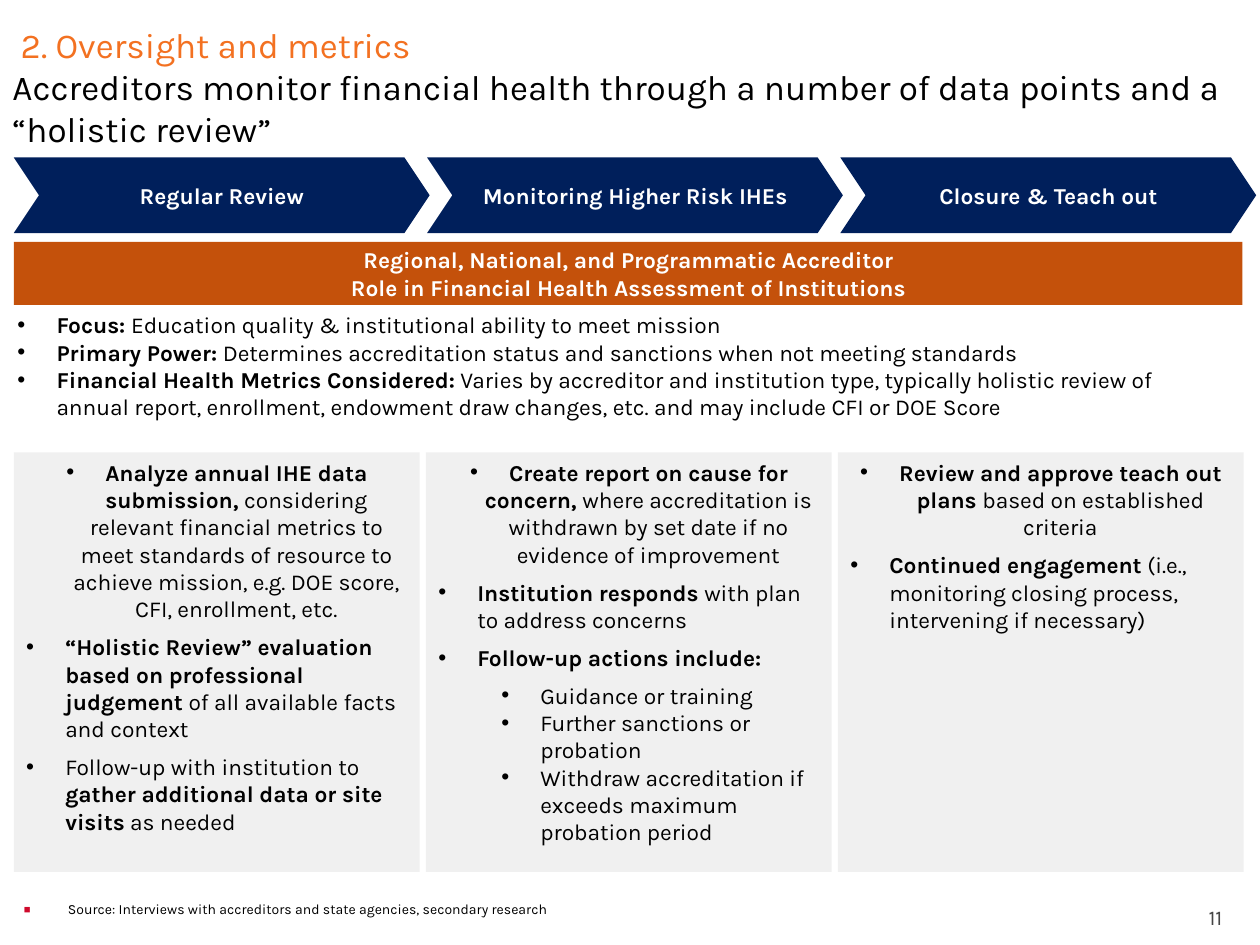
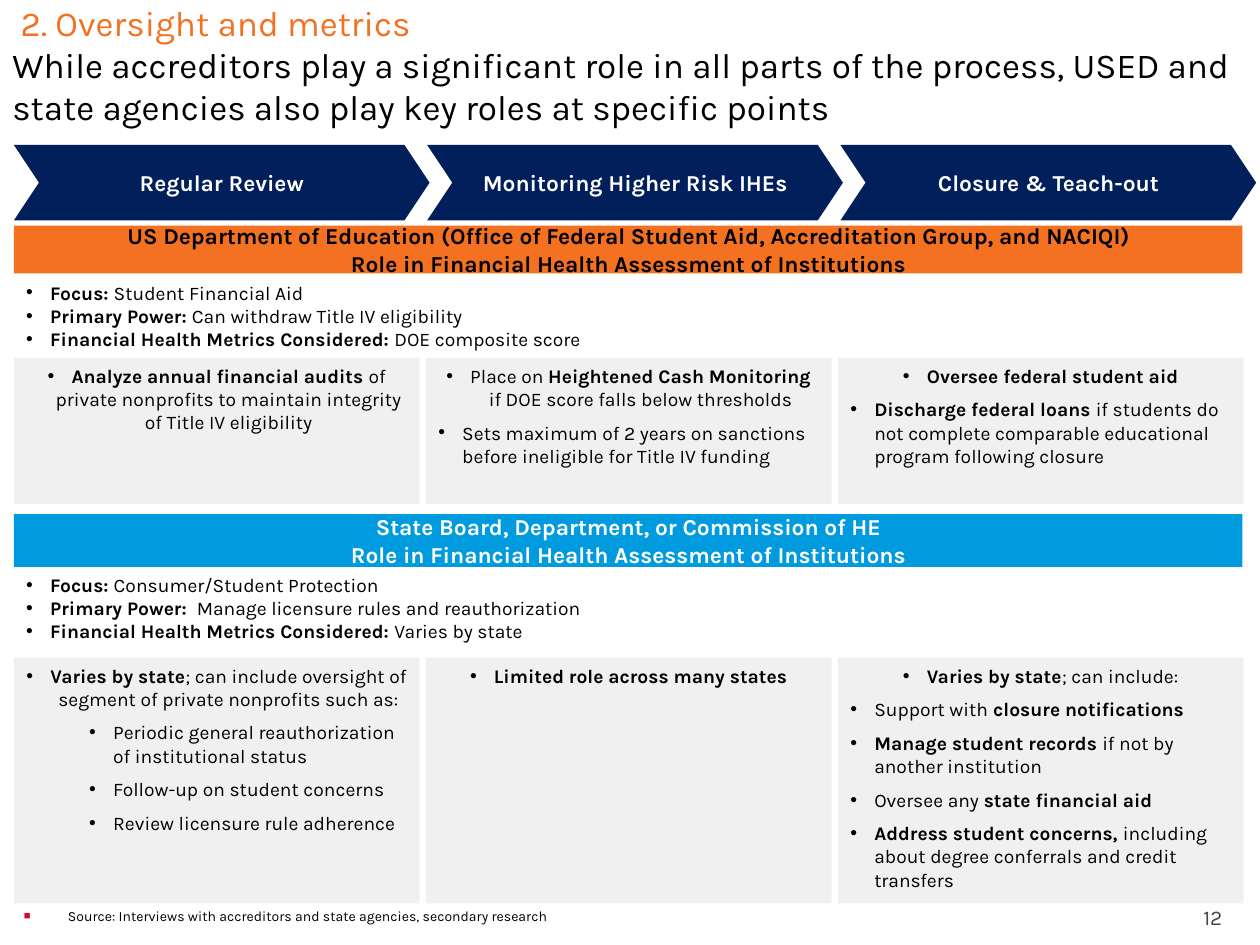
import pptx
import pptx.util
import pptx.dml.color
import pptx.enum.shapes
import pptx.enum.text
from lxml import etree
from pptx.oxml.ns import qn

Inches, Pt = pptx.util.Inches, pptx.util.Pt
RGB = pptx.dml.color.RGBColor
SHAPE = pptx.enum.shapes.MSO_SHAPE
ALIGN = pptx.enum.text.PP_ALIGN
ANCHOR = pptx.enum.text.MSO_ANCHOR

# Colours and font
NAVY, RUST = RGB(0x00, 0x1F, 0x5B), RGB(0xC4, 0x51, 0x0B)
ORANGE, BLUE = RGB(0xF3, 0x71, 0x21), RGB(0x00, 0x9B, 0xDE)
GREY, DARK = RGB(0xF0, 0xF0, 0xF0), RGB(0x45, 0x45, 0x45)
BLACK, WHITE = RGB(0, 0, 0), RGB(0xFF, 0xFF, 0xFF)
RED = RGB(0xCF, 0x0A, 0x2C)
FONT = "Karla"

# Content: **bold** marks strong words, a leading ">" marks a sub-bullet
SECTION = " 2. Oversight and metrics"
ROLE = "Role in Financial Health Assessment of Institutions"
SOURCE = "Source: Interviews with accreditors and state agencies, secondary research"

SLIDES = [
    dict(
        number=11,
        title="Accreditors monitor financial health through a number of data "
              "points and a “holistic review”",
        title_top=0, title_width=9.89, stage_top=1.25, source_top=7.05,
        stages=["Regular Review", "Monitoring Higher Risk IHEs",
                "Closure & Teach out"],
        size=13, indent=0.31, sub_after=0,
        agencies=[dict(
            name="Regional, National, and Programmatic Accreditor",
            fill=RUST, color=WHITE, band=(1.92, 0.5),
            facts_at=(0.04, 2.42, 9.81, 0.98), panel=(3.59, 3.33),
            facts=[
                "**Focus: **Education quality & institutional ability to meet mission",
                "**Primary Power: **Determines accreditation status and "
                "sanctions when not meeting standards",
                "**Financial Health Metrics Considered: **Varies by accreditor "
                "and institution type, typically holistic review of annual "
                "report, enrollment, endowment draw changes, etc. and may "
                "include CFI or DOE Score",
            ],
            columns=[
                ["**Analyze annual IHE data submission, **considering relevant "
                 "financial metrics to meet standards of resource to achieve "
                 "mission, e.g. DOE score, CFI, enrollment, etc.",
                 "**“Holistic Review” evaluation based on professional "
                 "judgement **of all available facts and context",
                 "Follow-up with institution to **gather additional data or "
                 "site visits** as needed"],
                ["**Create report on cause for concern, **where accreditation "
                 "is withdrawn by set date if no evidence of improvement",
                 "**Institution responds **with plan to address concerns",
                 "**Follow-up actions include:**",
                 ">Guidance or training",
                 ">Further sanctions or probation",
                 ">Withdraw accreditation if exceeds maximum probation period"],
                ["**Review and approve teach out plans **based on established "
                 "criteria",
                 "**Continued engagement **(i.e., monitoring closing process, "
                 "intervening if necessary)"],
            ])],
    ),
    dict(
        number=12,
        title="While accreditors play a significant role in all parts of the "
              "process, USED and state agencies also play key roles at "
              "specific points",
        title_top=-0.17, title_width=9.97, stage_top=1.15, source_top=7.1,
        stages=["Regular Review", "Monitoring Higher Risk IHEs",
                "Closure & Teach-out"],
        size=11, indent=0.19, sub_after=6,
        agencies=[
            dict(
                name="US Department of Education (Office of Federal Student "
                     "Aid, Accreditation Group, and NACIQI)",
                fill=ORANGE, color=BLACK, band=(1.79, 0.38),
                facts_at=(0.11, 2.18, 9.81, 0.66), panel=(2.84, 1.16),
                facts=[
                    "**Focus: **Student Financial Aid",
                    "**Primary Power: **Can withdraw Title IV eligibility",
                    "**Financial Health Metrics Considered: **DOE composite score",
                ],
                columns=[
                    ["**Analyze annual financial audits **of private nonprofits "
                     "to maintain integrity of Title IV eligibility"],
                    ["Place on **Heightened Cash Monitoring **if DOE score "
                     "falls below thresholds",
                     "Sets maximum of 2 years on sanctions before ineligible "
                     "for Title IV funding"],
                    ["**Oversee federal student aid**",
                     "**Discharge federal loans **if students do not complete "
                     "comparable educational program following closure"],
                ]),
            dict(
                name="State Board, Department, or Commission of HE",
                fill=BLUE, color=WHITE, band=(4.08, 0.42),
                facts_at=(0.11, 4.5, 9.81, 0.66), panel=(5.22, 1.95),
                facts=[
                    "**Focus: **Consumer/Student Protection",
                    "**Primary Power:  **Manage licensure rules and reauthorization",
                    "**Financial Health Metrics Considered: **Varies by state",
                ],
                columns=[
                    ["**Varies by state**; can include oversight of segment of "
                     "private nonprofits such as:",
                     ">Periodic general reauthorization of institutional status",
                     ">Follow-up on student concerns",
                     ">Review licensure rule adherence"],
                    ["**Limited role across many states**"],
                    ["**Varies by state**; can include:",
                     "Support with** closure notifications**",
                     "**Manage student records **if not by another institution",
                     "Oversee any **state financial aid**",
                     "**Address student concerns, **including about degree "
                     "conferrals and credit transfers"],
                ]),
        ],
    ),
]

# Grid shared by both slides, in inches
LEFT, BAND_W = 0.11, 9.75
PANEL_W, PANEL_STEP = 3.22, 3.27
STAGE_W, STAGE_H, STAGE_STEP = 3.3, 0.6, 3.28
SUB_INDENT = 0.5


def set_frame(sp, anchor=ANCHOR.TOP, insets=(0.1, 0.05, 0.1, 0.05)):
    tf = sp.text_frame
    left, top, right, bottom = map(Inches, insets)
    frame = dict(word_wrap=True, vertical_anchor=anchor, margin_left=left,
                 margin_top=top, margin_right=right, margin_bottom=bottom)
    for name, value in frame.items():
        setattr(tf, name, value)
    return tf


def add_box(s, at, **frame):
    return set_frame(s.shapes.add_textbox(*map(Inches, at)), **frame)


def add_filled(s, kind, at, fill, **frame):
    sp = s.shapes.add_shape(kind, *map(Inches, at))
    sp.shadow.inherit = False
    sp.fill.solid()
    sp.fill.fore_color.rgb = fill
    sp.line.fill.background()
    if kind == SHAPE.CHEVRON:
        sp.adjustments[0] = 0.333
    return set_frame(sp, **frame)


def add_run(p, text, size, color, bold=False):
    r = p.add_run()
    r.text = text
    for name, value in dict(name=FONT, size=Pt(size), bold=bold).items():
        setattr(r.font, name, value)
    r.font.color.rgb = color


def paragraphs(tf, items):
    """Pair each item with a paragraph, starting with the existing one."""
    for i, item in enumerate(items):
        yield (tf.add_paragraph() if i else tf.paragraphs[0]), item


def add_bullet(p, left, hang, char="•", color=None, percent=None):
    pPr = p._p.get_or_add_pPr()
    pPr.set("marL", str(Inches(left)))
    pPr.set("indent", str(-Inches(hang)))
    if color is not None:
        clr = etree.SubElement(pPr, qn("a:buClr"))
        etree.SubElement(clr, qn("a:srgbClr"), val=str(color))
    if percent:
        etree.SubElement(pPr, qn("a:buSzPct"), val=str(percent * 1000))
    etree.SubElement(pPr, qn("a:buFont"), typeface="Arial")
    etree.SubElement(pPr, qn("a:buChar"), char=char)


def write_centred(tf, lines, color):
    for p, line in paragraphs(tf, lines):
        p.alignment = ALIGN.CENTER
        add_run(p, line, 13, color, bold=True)


def write_bullets(tf, items, size, indent, after=0, sub_after=0):
    for p, item in paragraphs(tf, items):
        sub = item.startswith(">")
        p.level = int(sub)
        p.space_after = Pt(sub_after if sub else after)
        add_bullet(p, indent + SUB_INDENT * sub, indent)
        for i, part in enumerate(item.lstrip(">").split("**")):
            if part:
                add_run(p, part, size, BLACK, bold=i % 2 == 1)


def add_title(s, page):
    tf = add_box(s, (0, page["title_top"], page["title_width"], 1.37),
                 anchor=ANCHOR.MIDDLE, insets=(0.1, 0.05, 0.05, 0.05))
    p = tf.paragraphs[0]
    add_run(p, SECTION, 20, ORANGE)
    p.add_line_break()
    add_run(p, page["title"], 20, BLACK)


def add_stages(s, page):
    for i, stage in enumerate(page["stages"]):
        at = (LEFT + i * STAGE_STEP, page["stage_top"], STAGE_W, STAGE_H)
        tf = add_filled(s, SHAPE.CHEVRON, at, NAVY, anchor=ANCHOR.MIDDLE)
        write_centred(tf, [stage], WHITE)


def add_agency(s, agency, size, indent, sub_after):
    top, height = agency["band"]
    tf = add_filled(s, SHAPE.RECTANGLE, (LEFT, top, BAND_W, height),
                    agency["fill"], anchor=ANCHOR.MIDDLE)
    write_centred(tf, [agency["name"], ROLE], agency["color"])
    write_bullets(add_box(s, agency["facts_at"]), agency["facts"], size, indent)
    top, height = agency["panel"]
    for i, items in enumerate(agency["columns"]):
        at = (LEFT + i * PANEL_STEP, top, PANEL_W, height)
        tf = add_filled(s, SHAPE.RECTANGLE, at, GREY)
        write_bullets(tf, items, size, indent, 6, sub_after)


def add_footer(s, page):
    tf = add_box(s, (0, page["source_top"], 7.3, 0.48),
                 insets=(0.06, 0.1, 0.1, 0.05))
    p = tf.paragraphs[0]
    add_bullet(p, 0.48, 0.35, "■", RED, 80)
    add_run(p, SOURCE, 8, BLACK)
    tf = add_box(s, (9, 7.08, 0.8, 0.3), anchor=ANCHOR.BOTTOM,
                 insets=(0.1, 0.05, 0.1, 0))
    p = tf.paragraphs[0]
    p.alignment = ALIGN.RIGHT
    add_run(p, str(page["number"]), 12, DARK)


def main():
    prs = pptx.Presentation()
    prs.slide_width, prs.slide_height = Inches(10), Inches(7.5)
    for page in SLIDES:
        s = prs.slides.add_slide(prs.slide_layouts[6])
        add_title(s, page)
        add_stages(s, page)
        for agency in page["agencies"]:
            add_agency(s, agency, page["size"], page["indent"],
                       page["sub_after"])
        add_footer(s, page)
    prs.save("out.pptx")


if __name__ == "__main__":
    main()
